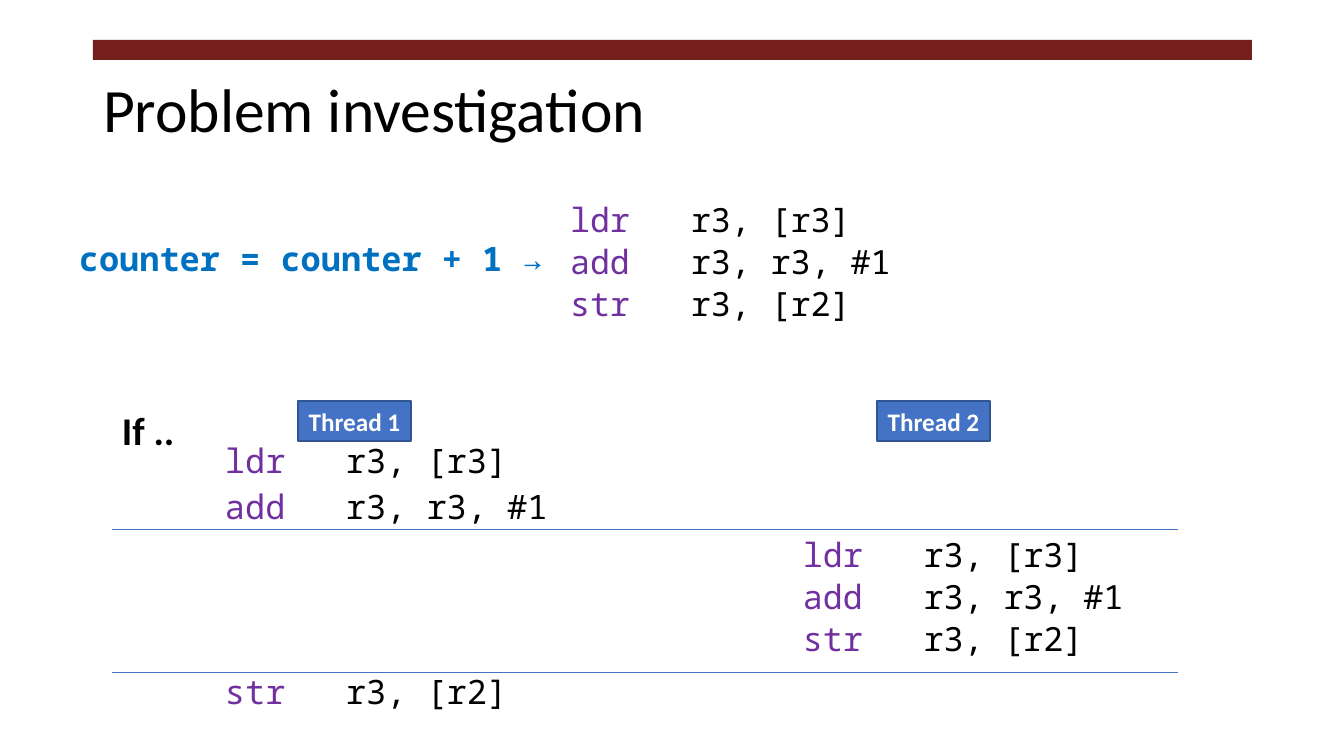
from lxml import etree
from pptx import Presentation
from pptx.dml.color import RGBColor
from pptx.enum.shapes import MSO_CONNECTOR, MSO_SHAPE
from pptx.enum.text import MSO_ANCHOR, MSO_AUTO_SIZE, PP_ALIGN
from pptx.oxml.ns import qn
from pptx.util import Emu, Pt

RECT = MSO_SHAPE.RECTANGLE
STRAIGHT = MSO_CONNECTOR.STRAIGHT
MIDDLE, TOP = MSO_ANCHOR.MIDDLE, MSO_ANCHOR.TOP
LEFT, CENTER = PP_ALIGN.LEFT, PP_ALIGN.CENTER
NO_FIT = MSO_AUTO_SIZE.NONE

BLACK = RGBColor(0x00, 0x00, 0x00)
WHITE = RGBColor(0xFF, 0xFF, 0xFF)
MAROON = RGBColor(0x75, 0x1F, 0x1C)
PURPLE = RGBColor(0x70, 0x30, 0xA0)
SKY = RGBColor(0x00, 0x70, 0xC0)
BLUE = RGBColor(0x44, 0x72, 0xC4)
NAVY = RGBColor(0x32, 0x54, 0x91)

SANS, MONO = "Calibri", "Noto Sans Mono"
LDR, ADD, STR = ("ldr", "r3, [r3]"), ("add", "r3, r3, #1"), ("str", "r3, [r2]")


def px(n):
    """Turn pixels into EMU."""
    return Emu(round(n * 914400 / 100.8))


class Deck:
    """Hold the style and the current slide."""

    def __init__(self, prs):
        """Add a title and content slide."""
        self.s = prs.slides.add_slide(prs.slide_layouts[1])

    def place(self, sp, box):
        """Move a placeholder to a box."""
        sp.left, sp.top, sp.width, sp.height = map(px, box)
        return sp

    def frame(self, sp, anchor=TOP, wrap=True):
        """Prepare the text frame of a shape."""
        tf = sp.text_frame
        tf.auto_size = NO_FIT
        tf.word_wrap = wrap
        tf.vertical_anchor = anchor
        return tf

    def run(self, p, text, size, color, font=SANS, bold=False):
        """Add one formatted run."""
        r = p.add_run()
        r.text = text
        r.font.name, r.font.size, r.font.bold = font, Pt(size), bold
        r.font.color.rgb = color

    def title(self, text, box):
        """Fill the title placeholder."""
        p = self.frame(self.place(self.s.shapes.title, box), MIDDLE).paragraphs[0]
        p.alignment, p.line_spacing = LEFT, 0.9
        self.run(p, text, 44, BLACK)

    def body(self, box):
        """Return the body placeholder, moved to a box."""
        return self.place(self.s.placeholders[1], box)

    def textbox(self, box):
        """Add an empty text box."""
        return self.s.shapes.add_textbox(*map(px, box))

    def text(self, text, box, size, color, font=SANS):
        """Add a bold one-line label."""
        p = self.frame(self.textbox(box)).paragraphs[0]
        self.run(p, text, size, color, font, True)

    def code(self, sp, lines, size, spacing, gaps):
        """Write instructions with their operands after a tab."""
        tf = self.frame(sp)
        for i, ((opcode, operands), gap) in enumerate(zip(lines, gaps)):
            p = tf.add_paragraph() if i else tf.paragraphs[0]
            p.line_spacing, p.space_before = spacing, Pt(gap)
            pPr = p._p.get_or_add_pPr()
            pPr.set("marL", "0")
            pPr.set("indent", "0")
            etree.SubElement(pPr, qn("a:buNone"))
            self.run(p, opcode, size, PURPLE, MONO)
            self.run(p, "\t " + operands, size, BLACK, MONO)

    def rect(self, box, fill, line=None):
        """Add a filled rectangle."""
        sp = self.s.shapes.add_shape(RECT, *map(px, box))
        sp.shadow.inherit = False
        sp.fill.solid()
        sp.fill.fore_color.rgb = fill
        if line is None:
            sp.line.fill.background()
        else:
            sp.line.color.rgb, sp.line.width = line, Pt(1)
        return sp

    def badge(self, text, box):
        """Add a thread label."""
        p = self.frame(self.rect(box, BLUE, NAVY), MIDDLE, False).paragraphs[0]
        p.alignment = CENTER
        self.run(p, text, 18, WHITE, bold=True)

    def rule(self, x1, x2, y):
        """Add a thin horizontal line."""
        c = self.s.shapes.add_connector(STRAIGHT, px(x1), px(y), px(x2), px(y))
        c.line.color.rgb, c.line.width = BLUE, Pt(0.5)
        etree.SubElement(c._element.spPr, qn("a:effectLst"))


def main():
    """Build the slide."""
    prs = Presentation()
    prs.slide_width, prs.slide_height = px(1344), px(756)
    d = Deck(prs)
    d.rect((93, 40, 1159, 20), MAROON)
    d.title("Problem investigation", (93, 40, 1159, 146))
    for sp in (d.body((560, 205, 393, 128)), d.textbox((793, 540, 393, 128))):
        d.code(sp, (LDR, ADD, STR), 23.8, 0.7, (10, 10, 10))
    d.text("counter = counter + 1 →", (69, 233, 529, 50), 24, SKY, MONO)
    d.text("If ..", (112, 401, 80, 57), 28, BLACK)
    for text, x in (("Thread 1", 298), ("Thread 2", 877)):
        d.badge(text, (x, 401, 113, 40))
    for y in (529, 672):
        d.rule(112, 1178, y)
    d.code(d.textbox((215, 443, 393, 284)), (LDR, ADD, STR), 24, 0.8, (10, 10, 109))
    prs.save("out.pptx")


if __name__ == "__main__":
    main()
